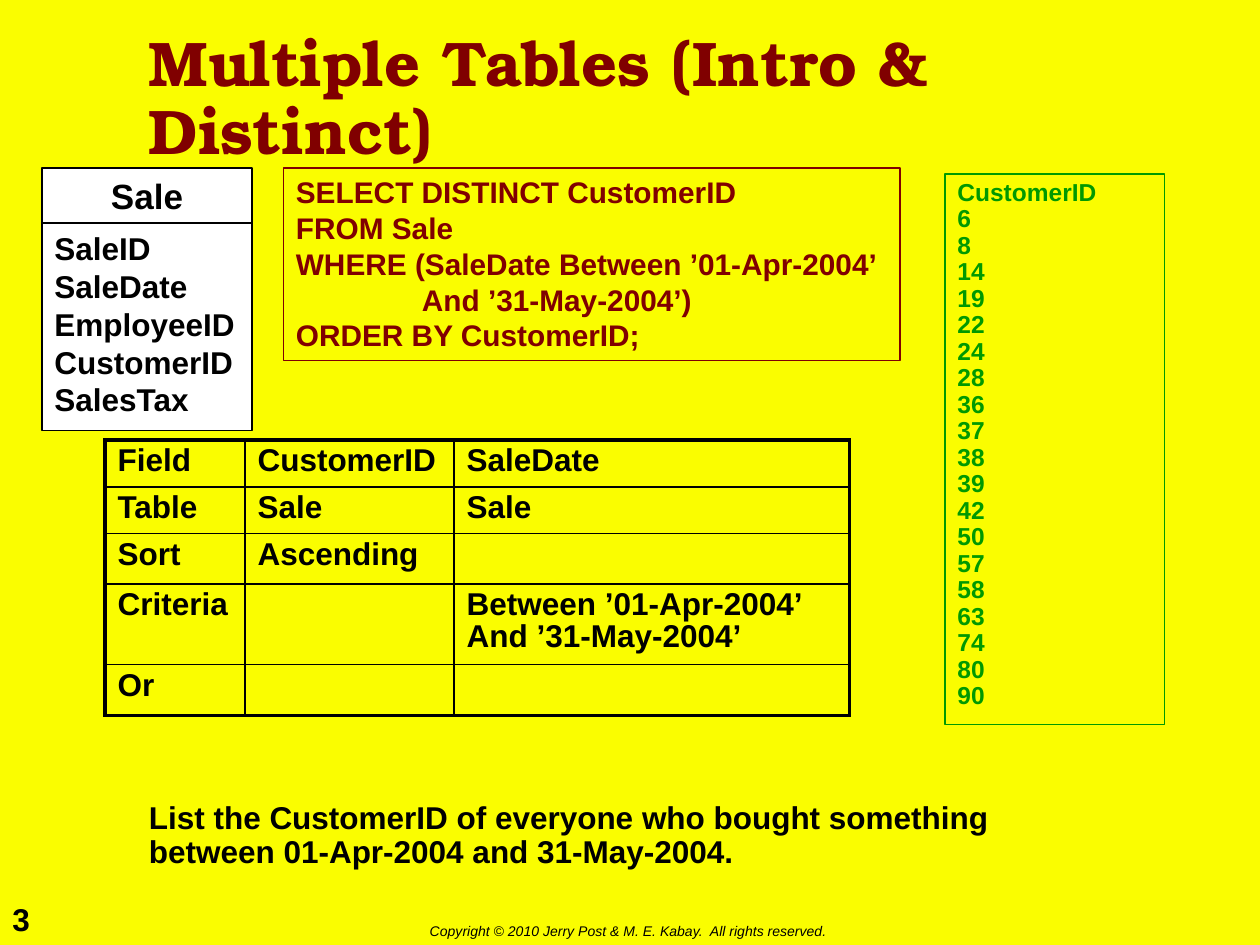
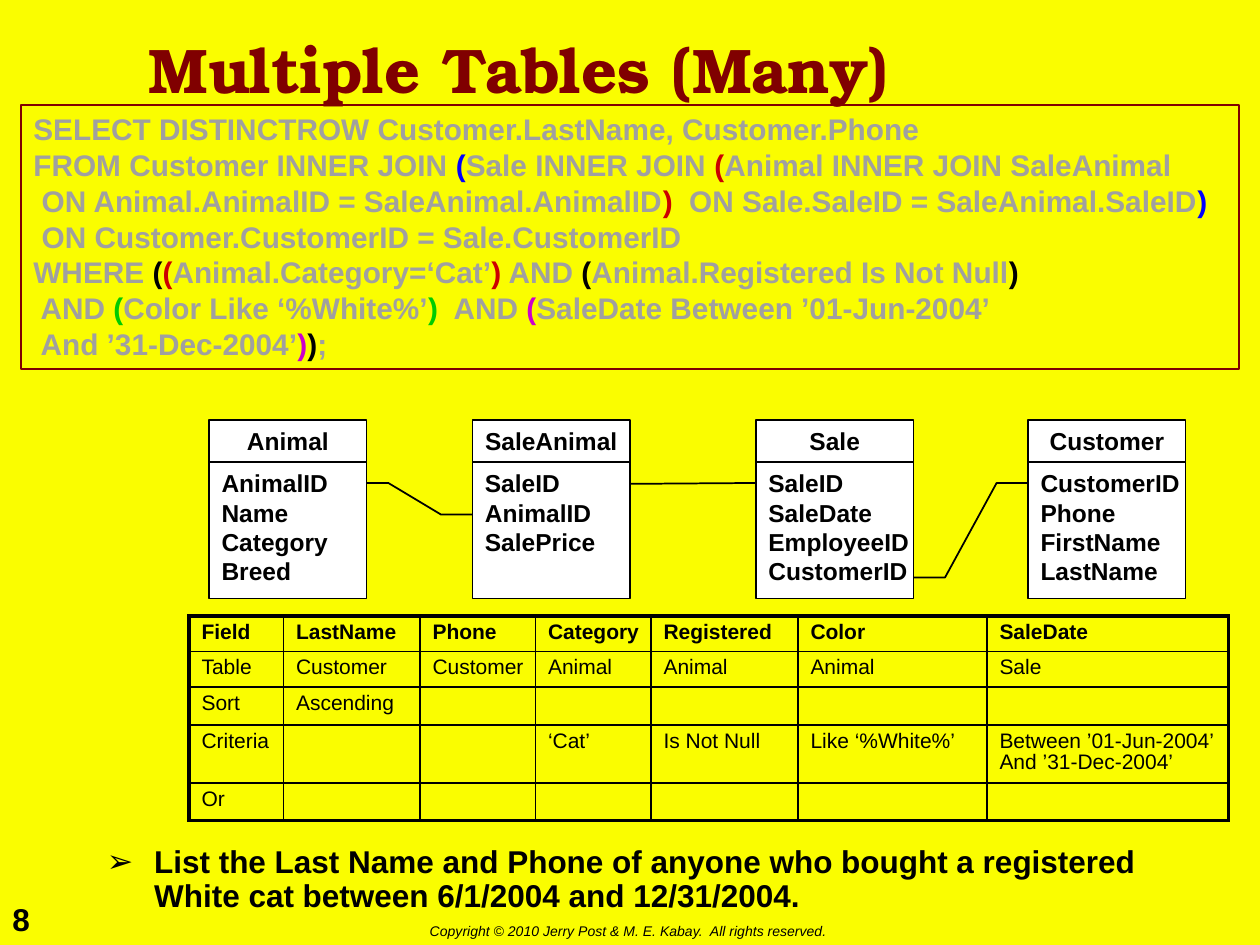
"""Builds two slides on querying multiple tables."""
from lxml import etree
from pptx import Presentation
from pptx.dml.color import RGBColor
from pptx.enum.shapes import MSO_CONNECTOR, MSO_SHAPE
from pptx.enum.text import MSO_ANCHOR, PP_ALIGN
from pptx.oxml.ns import qn
from pptx.util import Pt

RECT = MSO_SHAPE.RECTANGLE
LINE = MSO_CONNECTOR.STRAIGHT
TOP, MID = MSO_ANCHOR.TOP, MSO_ANCHOR.MIDDLE
LEFT, MIDST = PP_ALIGN.LEFT, PP_ALIGN.CENTER

HUES = {
    "page": "FAFD00", "ink": "000000", "wine": "800000", "leaf": "009900",
    "white": "FFFFFF", "code": "A0A0A0", "blue": "0000FF", "red": "CC0000",
    "green": "00CC00", "pink": "CC00CC",
}
SANS, SERIF = "Arial", "TeX Gyre Bonum"
RIGHTS = "Copyright © 2010 Jerry Post & M. E. Kabay.  All rights reserved."

QUERY = [
    "SELECT DISTINCT CustomerID",
    "FROM Sale",
    "WHERE (SaleDate Between ’01-Apr-2004’",
    "And ’31-May-2004’)",
    "ORDER BY CustomerID;",
]
BUYERS = ("CustomerID 6 8 14 19 22 24 28 36 37 38 39 42 50 57 58 63 74 80 90").split()
GRID = [
    ["Field", "CustomerID", "SaleDate"],
    ["Table", "Sale", "Sale"],
    ["Sort", "Ascending", ""],
    ["Criteria", "", "Between ’01-Apr-2004’ And ’31-May-2004’"],
    ["Or", "", ""],
]

JOINS = [
    "SELECT DISTINCTROW Customer.LastName, Customer.Phone",
    "FROM Customer INNER JOIN (Sale INNER JOIN (Animal INNER JOIN SaleAnimal",
    " ON Animal.AnimalID = SaleAnimal.AnimalID)  ON Sale.SaleID = SaleAnimal.SaleID)",
    " ON Customer.CustomerID = Sale.CustomerID",
    "WHERE ((Animal.Category=‘Cat’) AND (Animal.Registered Is Not Null)",
    " AND (Color Like ‘%White%’)  AND (SaleDate Between ’01-Jun-2004’",
    " And ’31-Dec-2004’));",
]
PAIRS = ["blue", "red", "ink", "red", "ink", "green", "pink"]
MODEL = [
    (119.5, "Animal", ["AnimalID", "Name", "Category", "Breed"]),
    (270, "SaleAnimal", ["SaleID", "AnimalID", "SalePrice"]),
    (432, "Sale", ["SaleID", "SaleDate", "EmployeeID", "CustomerID"]),
    (587.5, "Customer", ["CustomerID", "Phone", "FirstName", "LastName"]),
]
WIDE = [
    ["Field", "LastName", "Phone", "Category", "Registered", "Color", "SaleDate"],
    ["Table", "Customer", "Customer", "Animal", "Animal", "Animal", "Sale"],
    ["Sort", "Ascending", "", "", "", "", ""],
    ["Criteria", "", "", "‘Cat’", "Is Not Null", "Like ‘%White%’",
     "Between ’01-Jun-2004’ And ’31-Dec-2004’"],
    ["Or", "", "", "", "", "", ""],
]


def rgb(hue):
    """Return the colour of a named hue."""
    return RGBColor.from_string(HUES[hue])


def style(par, size, hue="ink", bold=True, italic=False, face=SANS):
    """Set the font of a paragraph."""
    font = par.font
    font.name, font.size, font.bold, font.italic = face, Pt(size), bold, italic
    font.color.rgb = rgb(hue)


def indent(par, left, first=0):
    """Indent a paragraph and its first line."""
    props = par._p.get_or_add_pPr()
    props.set("marL", str(Pt(left)))
    props.set("indent", str(Pt(first)))
    return props


def bullet(par, mark):
    """Give a paragraph a hanging bullet."""
    props = indent(par, 27, -27)
    tint = etree.SubElement(props, qn("a:buClr"))
    etree.SubElement(tint, qn("a:srgbClr"), val=HUES["ink"])
    etree.SubElement(props, qn("a:buFont"), typeface=SANS)
    etree.SubElement(props, qn("a:buChar"), char=mark)


def box(slide, at, lines, size, hue="ink", edge=None, fill=None, anchor=TOP,
        align=LEFT, lead=None, wrap=True, mark=None, **look):
    """Add a text box, framed if it has an edge, and return its paragraphs."""
    place = [Pt(n) for n in at]
    if edge:
        shape = slide.shapes.add_shape(RECT, *place)
        shape.shadow.inherit = False
        shape.line.color.rgb = rgb(edge)
        shape.line.width = Pt(1)
        if fill:
            shape.fill.solid()
            shape.fill.fore_color.rgb = rgb(fill)
        else:
            shape.fill.background()
    else:
        shape = slide.shapes.add_textbox(*place)
    frame = shape.text_frame
    frame.word_wrap, frame.vertical_anchor = wrap, anchor
    frame.text = "\n".join(lines)
    for par in frame.paragraphs:
        par.alignment = align
        if lead:
            par.line_spacing = lead
        if mark:
            bullet(par, mark)
        style(par, size, hue, **look)
    return frame.paragraphs


def base(deck, title, high, page):
    """Add a slide with its ground, title, number and footer."""
    slide = deck.slides.add_slide(deck.slide_layouts[6])
    slide.background.fill.solid()
    slide.background.fill.fore_color.rgb = rgb("page")
    box(slide, (0, 511, 36, 29), [page], 18)
    box(slide, (238.5, 523.5, 249, 17), [RIGHTS], 8, bold=False, italic=True)
    box(slide, (78, 12, 564, high), [title], 36, "wine", anchor=MID, lead=0.9, face=SERIF)
    return slide


def entity(slide, at, name, fields, head, sizes):
    """Draw a table of the data model: its fields under its name."""
    left, top, wide, high = at
    frame = {"edge": "ink", "fill": "white", "wrap": False}
    box(slide, (left, top + head, wide, high - head), fields, sizes[1], **frame)
    box(slide, (left, top, wide, head), [name], sizes[0], anchor=MID, align=MIDST, **frame)


def border(cell, sides):
    """Draw the four borders of a cell with the given widths."""
    props = cell._tc.get_or_add_tcPr()
    for spot, (side, width) in enumerate(sides.items()):
        line = etree.Element(qn("a:ln" + side), w=str(Pt(width)))
        paint = etree.SubElement(line, qn("a:solidFill"))
        etree.SubElement(paint, qn("a:srgbClr"), val=HUES["ink"])
        props.insert(spot, line)


def grid(slide, spot, rows, wides, highs, size, right=7.2, plain=False):
    """Add a query grid with a heavy frame around thin inner lines."""
    table = slide.shapes.add_table(
        len(rows), len(wides), *(Pt(n) for n in (*spot, sum(wides), sum(highs)))).table
    table.first_row = table.horz_banding = False
    for col, wide in zip(table.columns, wides):
        col.width = Pt(wide)
    for r, (row, high) in enumerate(zip(rows, highs)):
        table.rows[r].height = Pt(high)
        for c, word in enumerate(row):
            cell = table.cell(r, c)
            cell.margin_right = Pt(right)
            cell.fill.background()
            outer = {"L": c == 0, "R": c == len(wides) - 1,
                     "T": r == 0, "B": r == len(rows) - 1}
            border(cell, {side: 2.25 if rim else 1 for side, rim in outer.items()})
            cell.text = word
            par = cell.text_frame.paragraphs[0]
            style(par, size, bold=not plain or r == 0)
            if word:
                par.line_spacing = 0.9
            else:
                etree.SubElement(par._p, qn("a:endParaRPr"), sz=str(size * 100))


def nest(slide, at, lines, hues):
    """Add framed code whose matching brackets share a colour."""
    pars = box(slide, at, [""] * len(lines), 17, "code", edge="wine")
    hues, opened = iter(hues), []
    for par, line in zip(pars, lines):
        for part in line.replace("(", "\n(\n").replace(")", "\n)\n").split("\n"):
            if not part:
                continue
            hue = "code"
            if part == "(":
                hue = next(hues)
                opened.append(hue)
            elif part == ")":
                hue = opened.pop()
            run = par.add_run()
            run.text = part
            run.font.color.rgb = rgb(hue)


def bend(slide, *spots):
    """Draw a bent link through the given points."""
    first, *rest = [(Pt(x), Pt(y)) for x, y in spots]
    path = slide.shapes.build_freeform(*first)
    path.add_line_segments(rest, close=False)
    shape = path.convert_to_shape()
    shape.shadow.inherit = False
    shape.fill.background()
    shape.line.color.rgb = rgb("ink")
    shape.line.width = Pt(1)


def link(slide, *ends):
    """Draw a straight link."""
    wire = slide.shapes.add_connector(LINE, *(Pt(n) for n in ends))
    wire.line.color.rgb = rgb("ink")
    wire.line.width = Pt(1)
    etree.SubElement(wire._element.spPr, qn("a:effectLst"))


def intro(deck):
    """Build the slide on distinct rows."""
    slide = base(deck, "Multiple Tables (Intro & Distinct)", 90, "3")
    box(slide, (78, 455, 564, 42.5), [
        "List the CustomerID of everyone who bought something "
        "between 01-Apr-2004 and 31-May-2004."], 18, lead=0.9)
    box(slide, (540, 99.5, 125.5, 314.5), BUYERS, 14, "leaf", edge="leaf", lead=0.9)
    code = box(slide, (162, 96, 352.5, 110), QUERY, 17, "wine", edge="wine")
    indent(code[3], 72)
    entity(slide, (24, 96, 120, 150), "Sale",
           ["SaleID", "SaleDate", "EmployeeID", "CustomerID", "SalesTax"], 31.5, (20, 18))
    grid(slide, (60, 251.5), GRID, [80, 119.5, 226], [26.6, 26.6, 28.8, 46.2, 29], 18)


def many(deck):
    """Build the slide on joining many tables."""
    slide = base(deck, "Multiple Tables (Many)", 60, "8")
    box(slide, (54, 480, 612, 48), [
        "List the Last Name and Phone of anyone who bought a registered "
        "White cat between 6/1/2004 and 12/31/2004."], 18, lead=0.9, mark="➢")
    nest(slide, (12, 60, 696, 151), JOINS, PAIRS)
    for left, name, fields in MODEL:
        entity(slide, (left, 240, 90, 102), name, fields, 24, (14, 14))
    grid(slide, (108, 352), WIDE, [54, 78, 66, 66, 84, 108, 138],
         [20, 20.4, 21.4, 33.2, 21.6], 12, right=0, plain=True)
    bend(slide, (587.5, 276), (569.5, 276), (540, 330), (522, 330))
    link(slide, 432, 276, 360, 276.5)
    bend(slide, (270, 294), (252, 294), (222, 276), (209.5, 276))


def main():
    """Build and save the slides."""
    deck = Presentation()
    deck.slide_width, deck.slide_height = Pt(720), Pt(540)
    intro(deck)
    many(deck)
    deck.save("out.pptx")


if __name__ == "__main__":
    main()
